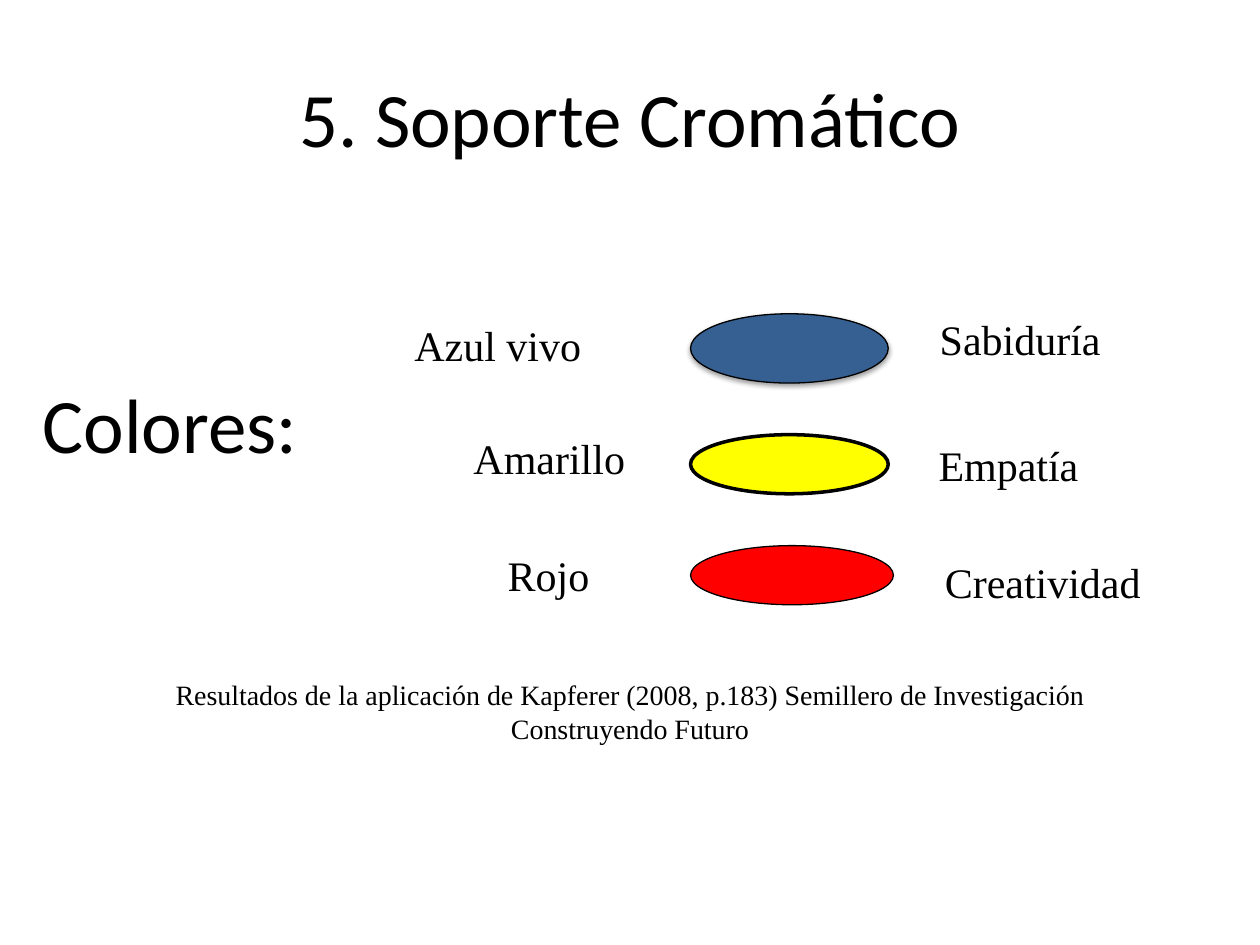
from dataclasses import dataclass

from lxml import etree
from pptx import Presentation
from pptx.dml.color import RGBColor
from pptx.enum.shapes import MSO_SHAPE
from pptx.enum.text import MSO_ANCHOR, MSO_AUTO_SIZE, PP_ALIGN
from pptx.oxml.ns import qn
from pptx.shapes.autoshape import Shape
from pptx.slide import Slide
from pptx.util import Pt

OVAL = MSO_SHAPE.OVAL
MIDDLE = MSO_ANCHOR.MIDDLE
FIT_SHAPE = MSO_AUTO_SIZE.SHAPE_TO_FIT_TEXT
LEFT, CENTER = PP_ALIGN.LEFT, PP_ALIGN.CENTER
TITLE_ONLY = 5


@dataclass(frozen=True)
class Theme:
    ink: str = "000000"
    blue: str = "366092"
    yellow: str = "FFFF00"
    red: str = "FF0000"
    heading_font: str = "Calibri"
    body_font: str = "Times New Roman"
    heading_size: float = 44
    label_size: float = 24
    source_size: float = 16


@dataclass(frozen=True)
class Box:
    left: float
    top: float
    width: float
    height: float


@dataclass(frozen=True)
class Label:
    text: str
    box: Box


@dataclass(frozen=True)
class BrandColor:
    name: Label
    meaning: Label
    swatch: Box
    fill: str
    outline: float = 0.75
    shadowed: bool = False


THEME = Theme()
SWATCH_LEFT = 394.6
LABEL_HEIGHT = 36

BRAND_COLORS = [
    BrandColor(
        Label("Azul vivo", Box(229.7, 179.3, 164.9, LABEL_HEIGHT)),
        Label("Sabiduría", Box(529.9, 175.7, 154.1, LABEL_HEIGHT)),
        Box(SWATCH_LEFT, 179.3, 113, 39.6), THEME.blue, shadowed=True,
    ),
    BrandColor(
        Label("Amarillo", Box(263.5, 243.4, 103, LABEL_HEIGHT)),
        Label("Empatía", Box(529.2, 247.7, 142.6, LABEL_HEIGHT)),
        Box(SWATCH_LEFT, 248.4, 113, 33.8), THEME.yellow, outline=2,
    ),
    BrandColor(
        Label("Rojo", Box(283, 310.3, 85, LABEL_HEIGHT)),
        Label("Creatividad", Box(532.8, 314.6, 130.3, LABEL_HEIGHT)),
        Box(SWATCH_LEFT, 311.8, 115.9, 33.8), THEME.red,
    ),
]
HEADING = Label("5. Soporte Cromático", Box(36, 21.6, 648, 90))
COLORS_HEADING = Label("Colores:", Box(17.3, 211.7, 164.2, 60.5))
SOURCE = Label(
    "Resultados de la aplicación de Kapferer (2008, p.183) "
    "Semillero de Investigación Construyendo Futuro",
    Box(90.7, 383.8, 538.6, 46),
)


def lengths(box: Box) -> tuple[Pt, Pt, Pt, Pt]:
    return Pt(box.left), Pt(box.top), Pt(box.width), Pt(box.height)


def write(shape: Shape, text: str, font: str, size: float, align: PP_ALIGN) -> None:
    paragraph = shape.text_frame.paragraphs[0]
    paragraph.alignment = align
    run = paragraph.add_run()
    run.text = text
    run.font.name = font
    run.font.size = Pt(size)
    run.font.color.rgb = RGBColor.from_string(THEME.ink)


def add_label(slide: Slide, label: Label, font: str = THEME.body_font,
              size: float = THEME.label_size, align: PP_ALIGN = LEFT) -> None:
    shape = slide.shapes.add_textbox(*lengths(label.box))
    shape.text_frame.word_wrap = True
    shape.text_frame.auto_size = FIT_SHAPE
    write(shape, label.text, font, size, align)


def add_shadow(shape: Shape) -> None:
    effects = shape.element.spPr.find(qn("a:effectLst"))
    shadow = etree.SubElement(
        effects, qn("a:outerShdw"), blurRad=str(Pt(3.1)), dist=str(Pt(1.6)),
        dir="5400000", rotWithShape="0",
    )
    tint = etree.SubElement(shadow, qn("a:srgbClr"), val=THEME.ink)
    etree.SubElement(tint, qn("a:alpha"), val="38000")


def add_brand_color(slide: Slide, color: BrandColor) -> None:
    swatch = slide.shapes.add_shape(OVAL, *lengths(color.swatch))
    swatch.shadow.inherit = False
    swatch.fill.solid()
    swatch.fill.fore_color.rgb = RGBColor.from_string(color.fill)
    swatch.line.color.rgb = RGBColor.from_string(THEME.ink)
    swatch.line.width = Pt(color.outline)
    if color.shadowed:
        add_shadow(swatch)
    add_label(slide, color.name)
    add_label(slide, color.meaning)


def add_heading(slide: Slide) -> None:
    title = slide.shapes.title
    title.left, title.top, title.width, title.height = lengths(HEADING.box)
    title.text_frame.vertical_anchor = MIDDLE
    write(title, HEADING.text, THEME.heading_font, THEME.heading_size, CENTER)


def main() -> None:
    presentation = Presentation()
    presentation.slide_width, presentation.slide_height = Pt(720), Pt(540)
    slide = presentation.slides.add_slide(presentation.slide_layouts[TITLE_ONLY])
    add_heading(slide)
    add_label(slide, COLORS_HEADING, THEME.heading_font, THEME.heading_size)
    for color in BRAND_COLORS:
        add_brand_color(slide, color)
    add_label(slide, SOURCE, size=THEME.source_size, align=CENTER)
    presentation.save("out.pptx")


if __name__ == "__main__":
    main()
